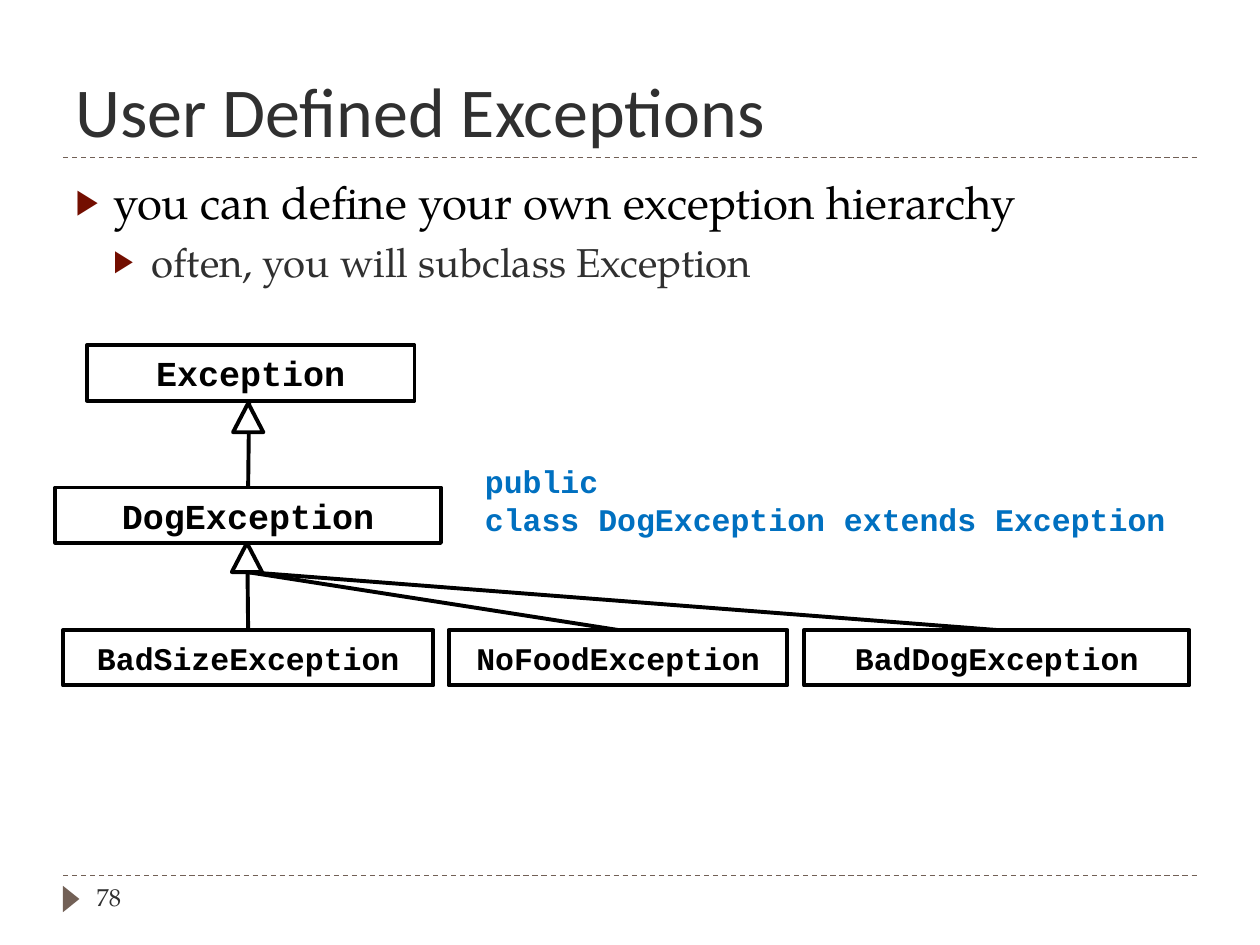
from lxml.etree import SubElement
from pptx import Presentation
from pptx.dml.color import RGBColor
from pptx.enum.dml import MSO_LINE
from pptx.enum.shapes import MSO_CONNECTOR, MSO_SHAPE
from pptx.enum.text import MSO_ANCHOR, MSO_AUTO_SIZE, PP_ALIGN
from pptx.oxml.ns import qn
from pptx.util import Pt

BLACK = RGBColor(0x00, 0x00, 0x00)
WHITE = RGBColor(0xFF, 0xFF, 0xFF)
CHARCOAL = RGBColor(0x30, 0x30, 0x30)
TAUPE = RGBColor(0x72, 0x60, 0x56)
MAROON = RGBColor(0x73, 0x0E, 0x00)
BLUE = RGBColor(0x00, 0x70, 0xC0)

HEADING_FONT, BODY_FONT, CODE_FONT = "Calibri", "TeX Gyre Pagella", "Courier New"
BOX_HEIGHT = 31.7
ARROW_WIDTH, ARROW_HEIGHT = 17.3, 16.6


def write(paragraph, text, *, size, font=BODY_FONT, color=CHARCOAL, bold=False,
          align=PP_ALIGN.LEFT, before=0):
    paragraph.alignment = align
    paragraph.space_before = Pt(before)
    run = paragraph.add_run()
    run.text = text
    run.font.name = font
    run.font.size = Pt(size)
    run.font.bold = bold
    run.font.color.rgb = color


def add_bullet(paragraph, left):
    properties = paragraph._p.get_or_add_pPr()
    properties.set("marL", str(Pt(left)))
    properties.set("indent", str(-Pt(21.6)))
    color = SubElement(properties, qn("a:buClr"))
    SubElement(color, qn("a:srgbClr"), val=str(MAROON))
    SubElement(properties, qn("a:buSzPct"), val="76000")
    SubElement(properties, qn("a:buChar"), char="▶")


class DiagramSlide:
    """Draws slide elements in one style; all lengths are in points."""

    def __init__(self, slide, line_width=2.25):
        self.slide = slide
        self.line_width = line_width

    def placeholder(self, shape, left, top, width, height, anchor):
        shape.left, shape.top = Pt(left), Pt(top)
        shape.width, shape.height = Pt(width), Pt(height)
        frame = shape.text_frame
        frame.auto_size = MSO_AUTO_SIZE.NONE
        frame.vertical_anchor = anchor
        return frame

    def title(self, text):
        frame = self.placeholder(self.slide.shapes.title, 36, 12.2, 648, 77.8,
                                 MSO_ANCHOR.BOTTOM)
        write(frame.paragraphs[0], text, size=40, font=HEADING_FONT)

    def bullets(self, items):
        frame = self.placeholder(self.slide.placeholders[1], 36, 95.8, 648, 388.8,
                                 MSO_ANCHOR.TOP)
        for index, (text, level, style) in enumerate(items):
            paragraph = frame.add_paragraph() if index else frame.paragraphs[0]
            paragraph.level = level
            write(paragraph, text, **style)
            add_bullet(paragraph, 21.6 * (level + 1))

    def text(self, lines, left, top, width, height, wrap=True, **style):
        shape = self.slide.shapes.add_textbox(Pt(left), Pt(top), Pt(width), Pt(height))
        frame = shape.text_frame
        frame.word_wrap = wrap
        for index, line in enumerate(lines):
            paragraph = frame.add_paragraph() if index else frame.paragraphs[0]
            write(paragraph, line, **style)

    def shape(self, kind, left, top, width, height, fill=None, line=BLACK):
        shape = self.slide.shapes.add_shape(kind, Pt(left), Pt(top), Pt(width), Pt(height))
        shape.shadow.inherit = False
        if fill is None:
            shape.fill.background()
        else:
            shape.fill.solid()
            shape.fill.fore_color.rgb = fill
        if line is None:
            shape.line.fill.background()
        else:
            shape.line.color.rgb = line
            shape.line.width = Pt(self.line_width)
        return shape

    def class_box(self, name, left, top, width, size):
        frame = self.shape(MSO_SHAPE.RECTANGLE, left, top, width, BOX_HEIGHT).text_frame
        frame.word_wrap = False
        frame.vertical_anchor = MSO_ANCHOR.MIDDLE
        write(frame.paragraphs[0], name, size=size, font=CODE_FONT, color=BLACK,
              bold=True, align=PP_ALIGN.CENTER)

    def line(self, start, end, color=BLACK, width=None, dash=None):
        connector = self.slide.shapes.add_connector(
            MSO_CONNECTOR.STRAIGHT, *(Pt(value) for value in (*start, *end)))
        connector.line.color.rgb = color
        connector.line.width = Pt(width or self.line_width)
        if dash:
            connector.line.dash_style = dash
        SubElement(connector._element.spPr, qn("a:effectLst"))

    def inheritance_arrow(self, left, top):
        self.shape(MSO_SHAPE.ISOSCELES_TRIANGLE, left, top, ARROW_WIDTH, ARROW_HEIGHT,
                   fill=WHITE)


def main():
    presentation = Presentation()
    presentation.slide_width, presentation.slide_height = Pt(720), Pt(540)
    diagram = DiagramSlide(presentation.slides.add_slide(presentation.slide_layouts[1]))

    # Rules and page marker
    for y in (500.4, 90):
        diagram.line((36, y), (684, y), TAUPE, 0.75, MSO_LINE.DASH)
    marker = diagram.shape(MSO_SHAPE.ISOSCELES_TRIANGLE, 33.1, 509, 15.1, 9.4,
                           fill=TAUPE, line=None)
    marker.rotation = 90
    diagram.text(["78"], 48.2, 500.4, 156.2, 28.8, size=14)

    # Title and list
    diagram.title("User Defined Exceptions")
    diagram.bullets([
        ("you can define your own exception hierarchy", 0,
         dict(size=26, color=BLACK, before=6)),
        ("often, you will subclass Exception", 1, dict(size=23, before=5)),
    ])

    # Class boxes
    base_top, parent_top, child_top = 197.3, 278.6, 360
    for name, left, top, width, size in (
        ("Exception", 49.7, base_top, 187.2, 20),
        ("DogException", 31.7, parent_top, 220.3, 20),
        ("BadSizeException", 36, child_top, 211.7, 18),
        ("NoFoodException", 256.3, child_top, 193.7, 18),
        ("BadDogException", 459.4, child_top, 220.3, 18),
    ):
        diagram.class_box(name, left, top, width, size)

    # Inheritance lines and arrowheads
    parent_bottom = parent_top + BOX_HEIGHT
    junction = (141.3, parent_bottom + ARROW_HEIGHT)
    diagram.line((142.4, base_top + BOX_HEIGHT), (141.8, parent_top))
    diagram.line((141.3, parent_bottom), (141.8, child_top))
    for child_center in (353.2, 569.5):
        diagram.line(junction, (child_center, child_top))
    diagram.inheritance_arrow(133.2, 230.4)
    diagram.inheritance_arrow(132.5, parent_bottom)

    # Class declaration
    diagram.text(["public", "class DogException extends Exception"],
                 270, 260.6, 405.4, 51.1, wrap=False,
                 size=18, font=CODE_FONT, color=BLUE, bold=True)

    presentation.save("out.pptx")


if __name__ == "__main__":
    main()
